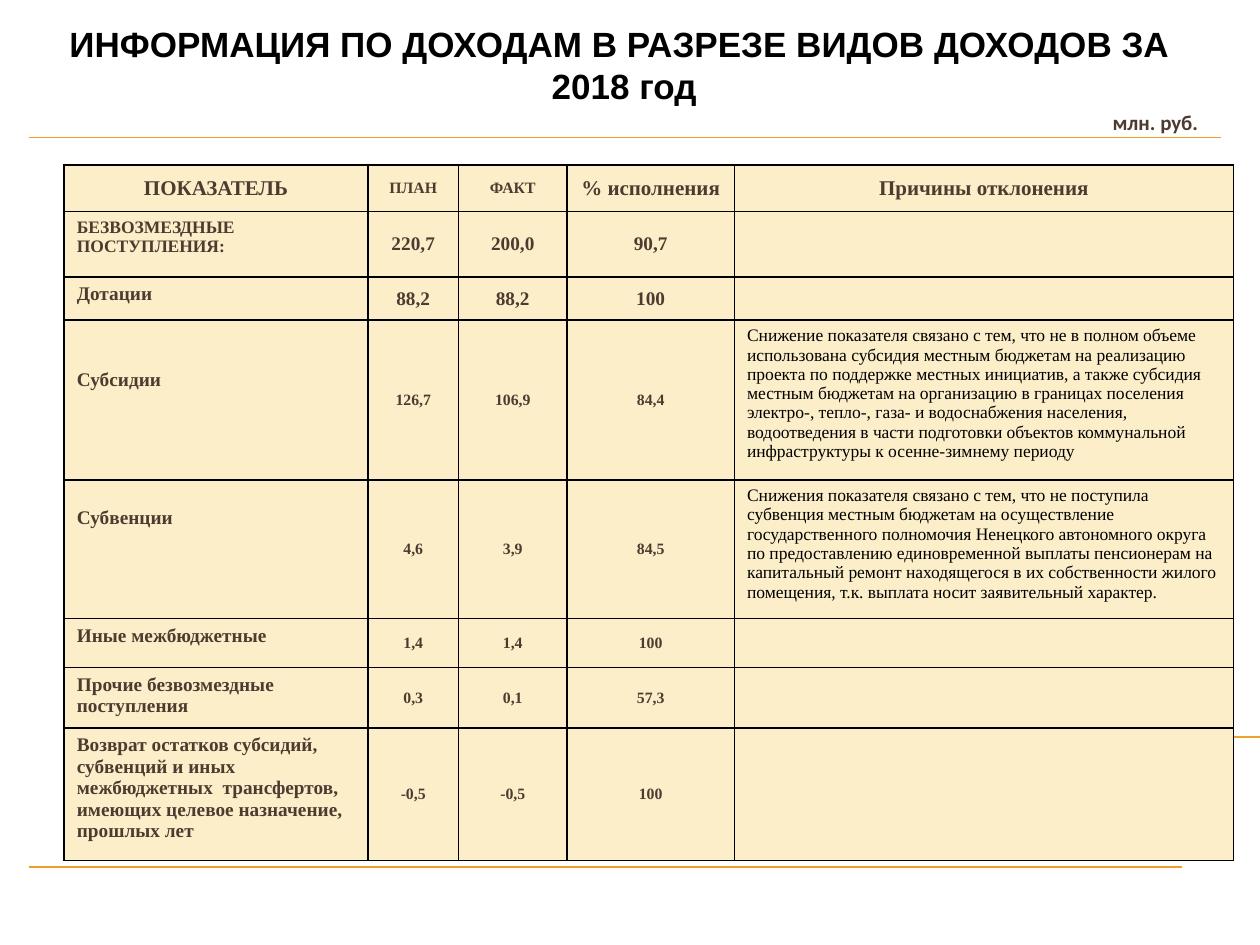
import pptx
import pptx.util
import pptx.dml.color
import pptx.enum.shapes
import pptx.enum.text
import pptx.oxml
import pptx.oxml.ns
import lxml.etree

Inches = pptx.util.Inches
Align = pptx.enum.text.PP_ALIGN
Anchor = pptx.enum.text.MSO_ANCHOR

COLORS = {"ink": "000000", "brown": "4E3B30", "cream": "FBEEC9",
          "gold": "F0A22E", "amber": "EF9F28"}

HEADS = [("ПОКАЗАТЕЛЬ", 12), ("ПЛАН", 9), ("ФАКТ", 9),
         ("% исполнения", 12), ("Причины отклонения", 12)]
SUBSIDY = ("Снижение показателя связано с тем, что не в полном объеме использована "
           "субсидия местным бюджетам на реализацию проекта по поддержке местных "
           "инициатив, а также субсидия местным бюджетам на организацию в границах "
           "поселения электро-, тепло-, газа- и водоснабжения населения, "
           "водоотведения в части подготовки объектов коммунальной инфраструктуры "
           "к осенне-зимнему периоду")
GRANT = ("Снижения показателя связано с тем, что не поступила субвенция местным "
         "бюджетам на осуществление государственного полномочия Ненецкого "
         "автономного округа по предоставлению единовременной выплаты пенсионерам "
         "на капитальный ремонт находящегося в их собственности жилого помещения, "
         "т.к. выплата носит заявительный характер.")
RETURN = ("Возврат остатков субсидий, субвенций и иных межбюджетных  трансфертов, "
          "имеющих целевое назначение, прошлых лет")
ROWS = [
    ("БЕЗВОЗМЕЗДНЫЕ ПОСТУПЛЕНИЯ:", 10, 0.05, ("220,7", "200,0", "90,7"), 11, ""),
    ("Дотации", 11, 0.05, ("88,2", "88,2", "100"), 11, ""),
    ("Субсидии", 11, 0.39, ("126,7", "106,9", "84,4"), 9, SUBSIDY),
    ("Субвенции", 11, 0.22, ("4,6", "3,9", "84,5"), 9, GRANT),
    ("Иные межбюджетные", 11, 0.05, ("1,4", "1,4", "100"), 9, ""),
    ("Прочие безвозмездные поступления", 11, 0.05, ("0,3", "0,1", "57,3"), 9, ""),
    (RETURN, 11, 0.05, ("-0,5", "-0,5", "100"), 9, ""),
]
WIDTHS = [2.41, 0.72, 0.86, 1.33, 3.96]
HEIGHTS = [0.37, 0.52, 0.34, 1.26, 1.1, 0.39, 0.48, 1.05]


class Deck:
    """Holds the style and the current slide, and draws each kind of element."""

    def __init__(self):
        self.file = pptx.Presentation()
        self.file.slide_width = Inches(10)
        self.file.slide_height = Inches(7.5)
        self.slide = self.file.slides.add_slide(self.file.slide_layouts[5])

    def tint(self, name):
        return pptx.dml.color.RGBColor.from_string(COLORS[name])

    def fill(self, frame, text, size, font, color="brown", bold=True, align=Align.LEFT):
        frame.text = text
        line = frame.paragraphs[0]
        line.alignment = align
        for run in line.runs:
            run.font.size = pptx.util.Pt(size)
            run.font.name = font
            run.font.bold = bold
            run.font.color.rgb = self.tint(color)
        if not text:
            end = line._p.get_or_add_endParaRPr()
            end.set("sz", str(size * 100))

    def title(self, text, left, top, width, height):
        shape = self.slide.shapes.title
        shape.left, shape.top = Inches(left), Inches(top)
        shape.width, shape.height = Inches(width), Inches(height)
        frame = shape.text_frame
        frame.word_wrap = True
        frame.auto_size = pptx.enum.text.MSO_AUTO_SIZE.NONE
        frame.vertical_anchor = Anchor.MIDDLE
        self.fill(frame, text, 20, "Arial", "ink", align=Align.CENTER)

    def label(self, text, left, top, width, height):
        box = self.slide.shapes.add_textbox(
            Inches(left), Inches(top), Inches(width), Inches(height))
        frame = box.text_frame
        frame.word_wrap = True
        frame.margin_left = frame.margin_right = 0
        frame.margin_top = frame.margin_bottom = Inches(0.01)
        self.fill(frame, text, 12, "Calibri")

    def rule(self, left, right, top, color, weight):
        line = self.slide.shapes.add_connector(
            pptx.enum.shapes.MSO_CONNECTOR.STRAIGHT,
            Inches(left), Inches(top), Inches(right), Inches(top))
        line.line.color.rgb = self.tint(color)
        line.line.width = pptx.util.Pt(weight)
        lxml.etree.SubElement(line._element.spPr, pptx.oxml.ns.qn("a:effectLst"))

    def cell(self, cell, text, size, color="brown", bold=True, mid=False, top=0.05):
        cell.margin_top = Inches(top)
        cell.vertical_anchor = Anchor.MIDDLE if mid else Anchor.TOP
        self.fill(cell.text_frame, text, size, "Times New Roman", color, bold,
                  Align.CENTER if mid else Align.LEFT)
        props = cell._tc.get_or_add_tcPr()
        for side in "LRTB":
            props.append(pptx.oxml.parse_xml(
                f'<a:ln{side} {pptx.oxml.ns.nsdecls("a")} w="12700"><a:solidFill>'
                f'<a:srgbClr val="{COLORS["ink"]}"/></a:solidFill></a:ln{side}>'))
        cell.fill.solid()
        cell.fill.fore_color.rgb = self.tint("cream")

    def table(self, left, top):
        grid = self.slide.shapes.add_table(
            len(HEIGHTS), len(WIDTHS), Inches(left), Inches(top),
            Inches(sum(WIDTHS)), Inches(sum(HEIGHTS))).table
        grid.first_row = grid.horz_banding = False
        for col, width in zip(grid.columns, WIDTHS):
            col.width = Inches(width)
        for row, height in zip(grid.rows, HEIGHTS):
            row.height = Inches(height)
        for col, (text, size) in enumerate(HEADS):
            self.cell(grid.cell(0, col), text, size, mid=True)
        for row, (name, size, gap, sums, small, cause) in enumerate(ROWS, 1):
            self.cell(grid.cell(row, 0), name, size, top=gap)
            for col, text in enumerate(sums, 1):
                self.cell(grid.cell(row, col), text, small, mid=True)
            self.cell(grid.cell(row, 4), cause, 10, "ink", False)


def main():
    deck = Deck()
    deck.rule(0.56, 10, 5.85, "gold", 0.75)
    deck.label("млн. руб.", 8.83, 0.86, 1.07, 0.22)
    deck.rule(0.23, 9.69, 1.09, "amber", 0.75)
    deck.rule(0.23, 9.38, 6.88, "amber", 1.25)
    deck.title("ИНФОРМАЦИЯ ПО ДОХОДАМ В РАЗРЕЗЕ ВИДОВ ДОХОДОВ ЗА  2018 год",
               0.23, 0, 9.45, 1.02)
    deck.table(0.51, 1.31)
    deck.file.save("out.pptx")


if __name__ == "__main__":
    main()
